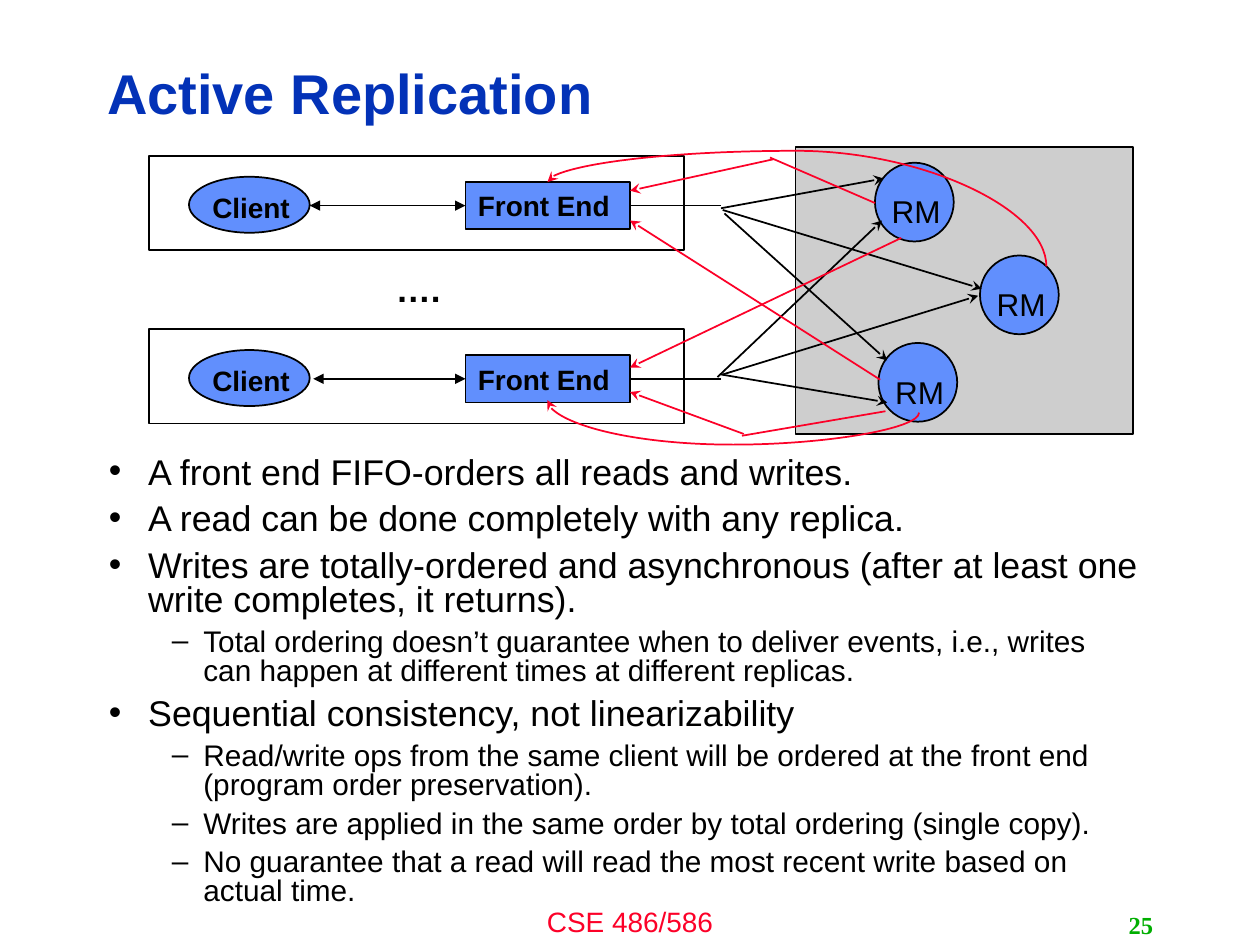
"""Build the Active Replication slide with its message diagram and notes."""
from lxml.etree import SubElement
from pptx import Presentation
from pptx.dml.color import RGBColor
from pptx.enum.shapes import MSO_CONNECTOR, MSO_SHAPE
from pptx.enum.text import MSO_ANCHOR, MSO_AUTO_SIZE, PP_ALIGN
from pptx.oxml.ns import qn
from pptx.util import Pt

BLACK = RGBColor(0x00, 0x00, 0x00)
NAVY = RGBColor(0x03, 0x32, 0xB7)
BLUE = RGBColor(0x61, 0x8F, 0xFD)
GRAY = RGBColor(0xCE, 0xCE, 0xCE)
RED = RGBColor(0xFC, 0x01, 0x28)
GREEN = RGBColor(0x00, 0xAE, 0x00)
ROW_PITCH = 99

prs = Presentation()
prs.slide_width, prs.slide_height = Pt(720), Pt(540)
s = prs.slides.add_slide(prs.slide_layouts[1])


def add_node(kind, x, y, w, h, fill=None, text="", size=16, bold=False,
             color=BLACK, align=PP_ALIGN.CENTER, font="Arial"):
    """Add a preset shape, or a text box when kind is None."""
    box = Pt(x), Pt(y), Pt(w), Pt(h)
    if kind is None:
        sp = s.shapes.add_textbox(*box)
    else:
        sp = s.shapes.add_shape(kind, *box)
        sp.shadow.inherit = False
        sp.line.color.rgb, sp.line.width = BLACK, Pt(1)
        if fill is None:
            sp.fill.background()
        else:
            sp.fill.solid()
            sp.fill.fore_color.rgb = fill
    if text:
        tf = sp.text_frame
        tf.word_wrap, tf.vertical_anchor = True, MSO_ANCHOR.MIDDLE
        tf.text = text
        p = tf.paragraphs[0]
        p.alignment = align
        f = p.runs[0].font
        f.name, f.size, f.bold, f.color.rgb = font, Pt(size), bold, color
    return sp


def add_line(x1, y1, x2, y2, color=BLACK, head=None, tail=None,
             kind=MSO_CONNECTOR.STRAIGHT):
    """Add a thin connector with optional arrowheads."""
    cx = s.shapes.add_connector(kind, Pt(x1), Pt(y1), Pt(x2), Pt(y2))
    cx.line.color.rgb, cx.line.width = color, Pt(1)
    ln = cx.line._get_or_add_ln()
    for tag, arrow in (("a:headEnd", head), ("a:tailEnd", tail)):
        if arrow:
            SubElement(ln, qn(tag), type=arrow)
    SubElement(cx._element.spPr, qn("a:effectLst"))
    return cx


title = s.shapes.title
title.left, title.top, title.width, title.height = Pt(54), Pt(26), Pt(575), Pt(58)
tf = title.text_frame
tf.text = "Active Replication"
tf.auto_size, tf.vertical_anchor = MSO_AUTO_SIZE.NONE, MSO_ANCHOR.MIDDLE
p = tf.paragraphs[0]
p.alignment, p.line_spacing = PP_ALIGN.LEFT, 0.9
f = p.runs[0].font
f.name, f.size, f.bold, f.color.rgb = "Arial", Pt(32), True, NAVY

notes = [
    (0, "A front end FIFO-orders all reads and writes."),
    (0, "A read can be done completely with any replica."),
    (0, "Writes are totally-ordered and asynchronous (after at least one write "
        "completes, it returns)."),
    (1, "Total ordering doesn’t guarantee when to deliver events, i.e., writes can "
        "happen at different times at different replicas."),
    (0, "Sequential consistency, not linearizability"),
    (1, "Read/write ops from the same client will be ordered at the front end "
        "(program order preservation)."),
    (1, "Writes are applied in the same order by total ordering (single copy)."),
    (1, "No guarantee that a read will read the most recent write based on actual time."),
]
levels = [(20.4, 7, 22.5, -22.5, "•"), (17, 5.9, 54, -18, "–")]
body = s.placeholders[1]
body.left, body.top, body.width, body.height = Pt(55), Pt(258), Pt(605), Pt(270)
tf = body.text_frame
tf.text = "\n".join(text for _, text in notes)
tf.auto_size = MSO_AUTO_SIZE.NONE
for p, (level, _) in zip(tf.paragraphs, notes):
    size, before, margin, indent, bullet = levels[level]
    p.level, p.line_spacing, p.space_before = level, 0.8, Pt(before)
    pPr = p._p.get_or_add_pPr()
    pPr.set("marL", str(Pt(margin)))
    pPr.set("indent", str(Pt(indent)))
    SubElement(pPr, qn("a:buChar"), char=bullet)
    f = p.runs[0].font
    f.name, f.size, f.color.rgb = "Arial", Pt(size), BLACK

add_node(None, 240, 513.5, 240, 26.5, text="CSE 486/586", color=RED)
add_node(None, 516, 517, 150, 23, text="25", size=14, bold=True, color=GREEN,
         align=PP_ALIGN.RIGHT, font="Times New Roman")

add_node(MSO_SHAPE.RECTANGLE, 454.5, 84, 193, 164, GRAY)
for row in range(2):
    dy = row * ROW_PITCH
    add_node(MSO_SHAPE.RECTANGLE, 85, 89 + dy, 306, 54)
    add_node(MSO_SHAPE.OVAL, 108, 101 + dy, 69, 32, BLUE)
    add_node(None, 109, 105.3 + dy, 69, 26.5, text="Client", bold=True)
    front_end = add_node(MSO_SHAPE.RECTANGLE, 266, 104 + dy, 94, 27, BLUE,
                         "Front End", bold=True, align=PP_ALIGN.LEFT)
    y = 117.5 + dy
    request = add_line(177 + 2 * row, y, 266, y, head="triangle", tail="triangle")
    request.end_connect(front_end, 1)
    trunk = add_line(360, y, 412, y)
    trunk.begin_connect(front_end, 3)

for x, y in [(500, 93), (560, 146), (502, 196)]:
    add_node(MSO_SHAPE.OVAL, x, y, 45, 45, BLUE)
    add_node(None, x - 3, y + 14.5, 53, 26.5, text="RM", size=18)
add_node(None, 187, 149, 104, 32, text="….", size=20, bold=True)

requests = [
    (412, 119, 505, 102), (413, 120, 561, 165), (414, 122, 507, 206),
    (410, 215.5, 504, 126), (412, 214, 507, 230), (413, 214, 559, 169),
]
for ends in requests:
    add_line(*ends, tail="stealth")

replies = [
    (500, 116, 440, 90, None), (442, 91, 360, 109, "stealth"),
    (503, 217, 360, 126, "stealth"), (506, 235, 424, 249, None),
    (425, 248, 360, 224, "stealth"), (515, 136, 360, 210, "stealth"),
]
for *ends, tail in replies:
    add_line(*ends, RED, tail=tail)

arcs = [
    (431.3, -14.4, 48.2, 285.1, 270, "flipV", 137000),
    (415.4, 126, 7.2, 212.4, 90, "flipH", -253800),
]
for x, y, w, h, angle, flip, bend in arcs:
    arc = add_line(x, y, x + w, y + h, RED, tail="stealth", kind=MSO_CONNECTOR.CURVE)
    xfrm = arc._element.spPr.find(qn("a:xfrm"))
    xfrm.set("rot", str(angle * 60000))
    xfrm.set(flip, "1")
    geom = arc._element.spPr.find(qn("a:prstGeom"))
    SubElement(geom.find(qn("a:avLst")), qn("a:gd"), name="adj1", fmla=f"val {bend}")

prs.save("out.pptx")
